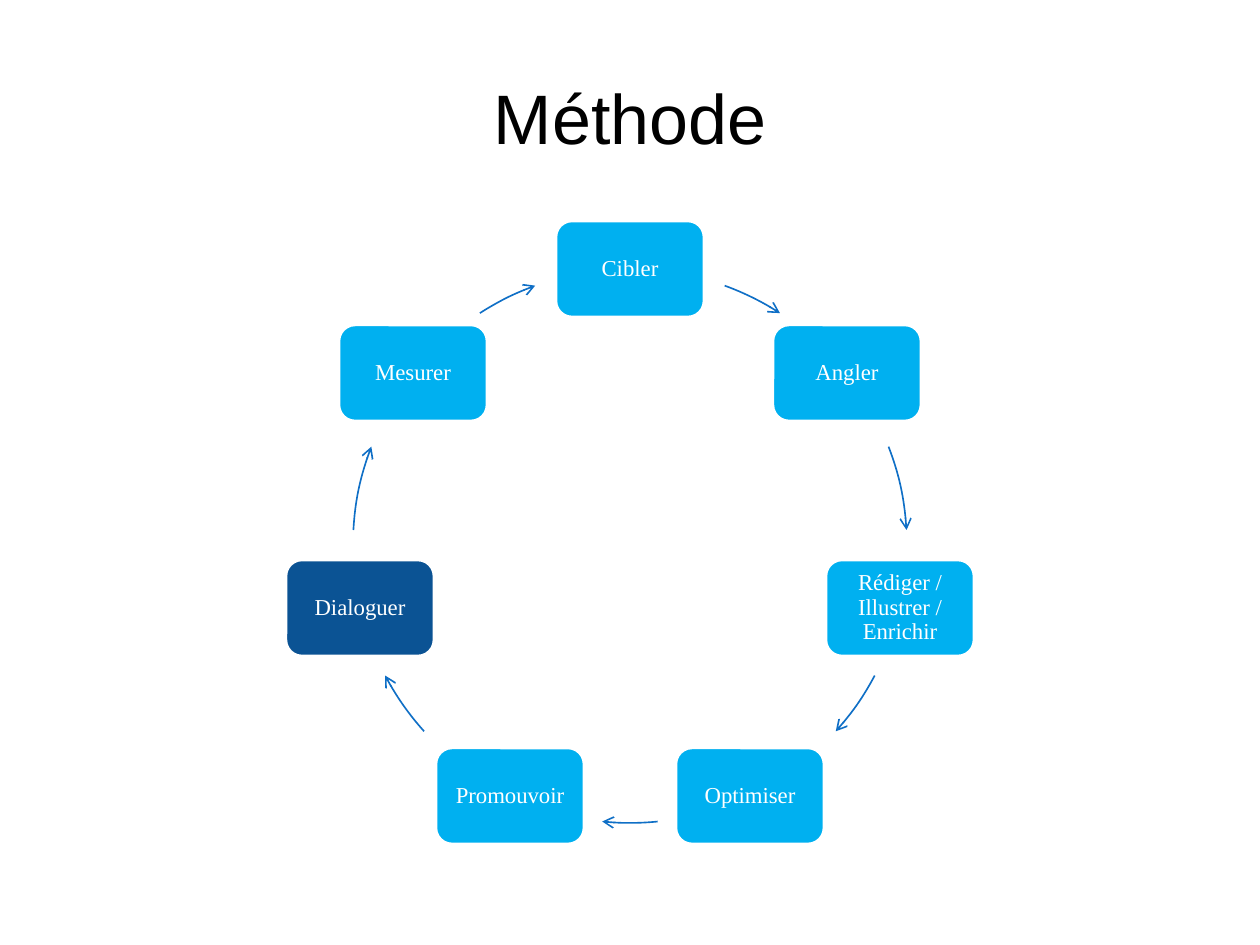
from math import cos, radians, sin

from lxml.etree import SubElement
from pptx import Presentation
from pptx.dml.color import RGBColor
from pptx.enum.shapes import MSO_SHAPE as Shape
from pptx.enum.text import MSO_ANCHOR as Anchor, PP_ALIGN as Align
from pptx.oxml.ns import qn
from pptx.util import Pt

PX = 914400 // 126
CENTER_X, CENTER_Y, RADIUS = 630, 546, 277
BOX_W, BOX_H = 148, 96
SKY, NAVY, ARROW, WHITE, BLACK = "00B0F0", "0B5394", "0F6FC6", "FFFFFF", "000000"

# Label, fill, then start and end angle of the arrow to the next step
STEPS = [
    ("Cibler", SKY, 290, 302.8),
    ("Angler", SKY, 339, 356.7),
    ("Rédiger / Illustrer / Enrichir", SKY, 27.9, 42),
    ("Optimiser", SKY, 84.25, 95.75),
    ("Promouvoir", SKY, 138, 152.1),
    ("Dialoguer", NAVY, 183.3, 201),
    ("Mesurer", SKY, 237.2, 250),
]


def color(hex_code):
    return RGBColor.from_string(hex_code)


def write(shape, text, font, size, hex_code):
    """Put one centred paragraph in the middle of a shape."""
    frame = shape.text_frame
    frame.word_wrap = True
    frame.vertical_anchor = Anchor.MIDDLE
    para = frame.paragraphs[0]
    para.text = text
    para.alignment = Align.CENTER
    para.font.name = font
    para.font.size = Pt(size)
    para.font.color.rgb = color(hex_code)
    return frame


deck = Presentation()
deck.slide_width, deck.slide_height = 1260 * PX, 945 * PX
page = deck.slides.add_slide(deck.slide_layouts[6])

title = page.shapes.add_textbox(63 * PX, 38 * PX, 1134 * PX, 158 * PX)
write(title, "Méthode", "Arial", 40, BLACK)

cycle = page.shapes.add_group_shape()
for index, (label, fill, start, end) in enumerate(STEPS):
    angle = radians(360 * index / len(STEPS) - 90)
    left = round(CENTER_X + RADIUS * cos(angle) - BOX_W / 2)
    top = round(CENTER_Y + RADIUS * sin(angle) - BOX_H / 2)
    box = cycle.shapes.add_shape(
        Shape.ROUNDED_RECTANGLE, left * PX, top * PX, BOX_W * PX, BOX_H * PX)
    box.shadow.inherit = False
    box.fill.solid()
    box.fill.fore_color.rgb = color(fill)
    box.line.color.rgb = color(WHITE)
    box.line.width = Pt(1.5)
    frame = write(box, label, "Times New Roman", 13, WHITE)
    frame.margin_left = frame.margin_right = 6 * PX
    frame.margin_top = frame.margin_bottom = 6 * PX
    frame.paragraphs[0].line_spacing = 0.9

    arc = cycle.shapes.add_shape(
        Shape.ARC, (CENTER_X - RADIUS) * PX, (CENTER_Y - RADIUS) * PX,
        2 * RADIUS * PX, 2 * RADIUS * PX)
    # Arc angles are in 60000ths of a degree, adjustments in 100000ths
    arc.adjustments[0] = start * 0.6
    arc.adjustments[1] = end * 0.6
    arc.shadow.inherit = False
    arc.fill.background()
    arc.line.color.rgb = color(ARROW)
    arc.line.width = Pt(0.94)
    SubElement(arc.line._get_or_add_ln(), qn("a:tailEnd"), type="arrow")

deck.save("out.pptx")
